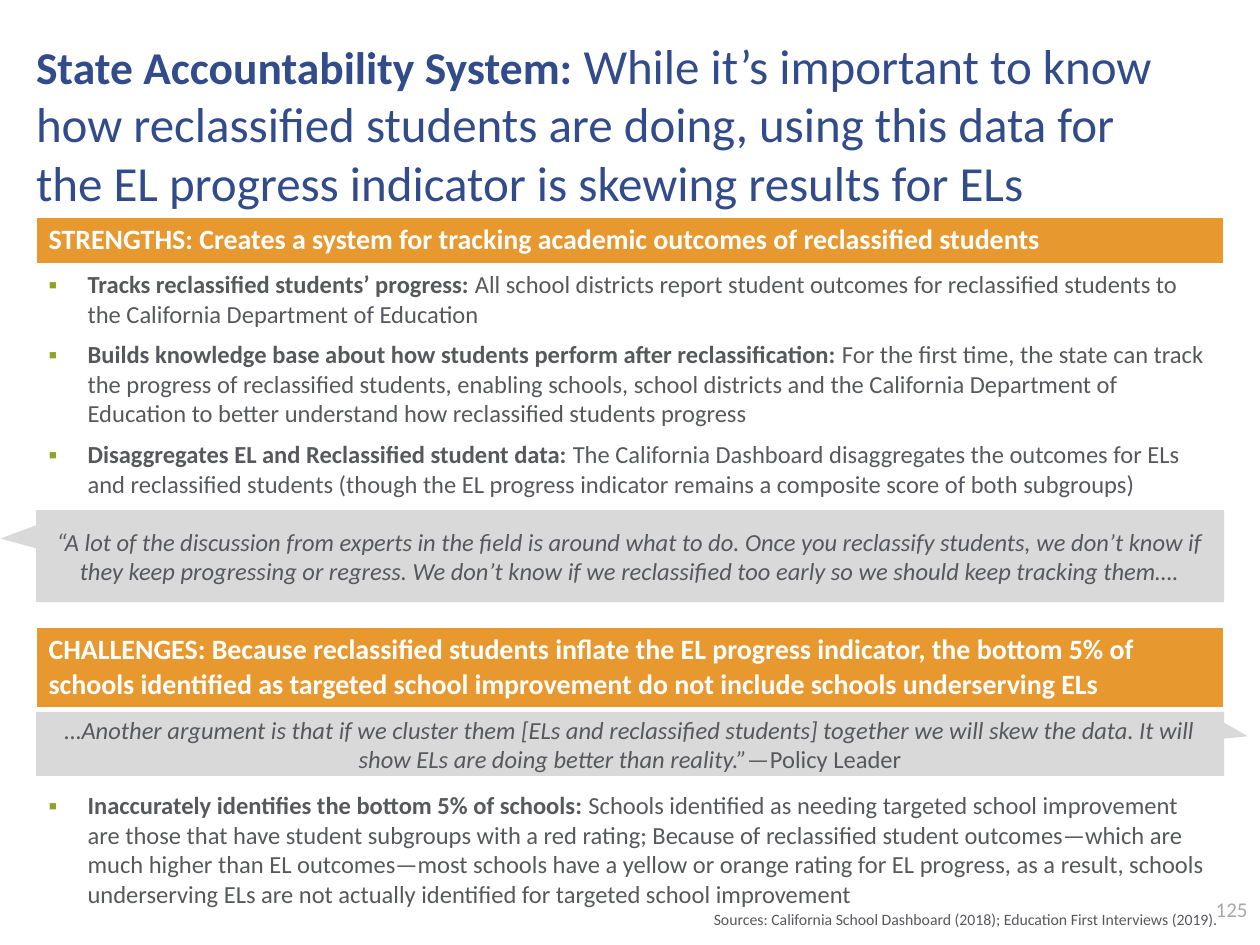
"""Build the slide on strengths and challenges of the state accountability system."""
from dataclasses import dataclass
from typing import Optional

from lxml.etree import SubElement
from pptx import Presentation
from pptx.dml.color import RGBColor
from pptx.enum.shapes import MSO_SHAPE
from pptx.enum.text import MSO_ANCHOR as Anchor, MSO_AUTO_SIZE as AutoSize, PP_ALIGN as Align
from pptx.oxml.ns import qn
from pptx.util import Emu, Pt

SCALE = 914400 / 126
FONT = "Calibri"
WHITE = RGBColor(0xFF, 0xFF, 0xFF)
NAVY = RGBColor(0x32, 0x4B, 0x8B)
ORANGE = RGBColor(0xE7, 0x98, 0x2E)
GREEN = RGBColor(0x91, 0xA2, 0x26)
GRAY = RGBColor(0x56, 0x58, 0x5C)
LIGHT_GRAY = RGBColor(0xD9, 0xD9, 0xD9)
NUMBER_GRAY = RGBColor(0xA9, 0xA9, 0xA9)
LEFT, WIDTH = 36, 1188
BULLET_INDENT = 39


@dataclass(frozen=True)
class Span:
    text: str
    size: int = 14
    color: RGBColor = GRAY
    bold: bool = False
    italic: bool = False


@dataclass(frozen=True)
class Bullet:
    lead: str
    body: str


@dataclass(frozen=True)
class Section:
    heading: str
    heading_height: int
    bullets: list[Bullet]
    body_height: int
    body_margin: int


@dataclass(frozen=True)
class Quote:
    spans: list[Span]
    top: int
    height: int
    tip: tuple[float, float]


@dataclass(frozen=True)
class Label:
    span: Span
    box: tuple[int, int, int, int]
    inset: Optional[int] = None
    anchor: Anchor = Anchor.TOP


SECTIONS = [
    Section(
        "STRENGTHS: Creates a system for tracking academic outcomes of reclassified students", 47,
        [
            Bullet("Tracks reclassified students’ progress: ",
                   "All school districts report student outcomes for reclassified students to "
                   "the California Department of Education"),
            Bullet("Builds knowledge base about how students perform after reclassification: ",
                   "For the first time, the state can track the progress of reclassified students, "
                   "enabling schools, school districts and the California Department of Education "
                   "to better understand how reclassified students progress"),
            Bullet("Disaggregates EL and Reclassified student data: ",
                   "The California Dashboard disaggregates the outcomes for ELs and reclassified "
                   "students (though the EL progress indicator remains a composite score of both "
                   "subgroups)"),
        ], 363, 6),
    Section(
        "CHALLENGES: Because reclassified students inflate the EL progress indicator, the bottom "
        "5% of schools identified as targeted school improvement do not include schools "
        "underserving ELs", 81,
        [
            Bullet("Inaccurately identifies the bottom 5% of schools: ",
                   "Schools identified as needing targeted school improvement are those that have "
                   "student subgroups with a red rating; Because of reclassified student "
                   "outcomes—which are much higher than EL outcomes—most schools have a yellow or "
                   "orange rating for EL progress, as a result, schools underserving ELs are not "
                   "actually identified for targeted school improvement"),
        ], 252, 83),
]

QUOTES = [
    Quote([Span("…Another argument is that if we cluster them [ELs and reclassified students] "
                "together we will skew the data. It will show ELs are doing better than "
                "reality.”—", italic=True), Span("Policy Leader")], 712, 64, (0.52, -0.12)),
    Quote([Span("“A lot of the discussion from experts in the field is around what to do. Once "
                "you reclassify students, we don’t know if they keep progressing or regress. We "
                "don’t know if we reclassified too early so we should keep tracking them….",
                italic=True)], 510, 92, (-0.53, -0.19)),
]

LABELS = [
    Label(Span("125", 12, NUMBER_GRAY), (1176, 890, 84, 38), anchor=Anchor.MIDDLE),
    Label(Span("Sources: California School Dashboard (2018); Education First Interviews (2019).", 9),
          (302, 910, 915, 25), inset=0),
]


def px(length: int) -> Emu:
    return Emu(round(length * SCALE))


def add_spans(paragraph, spans: list[Span]) -> None:
    for span in spans:
        run = paragraph.add_run()
        run.text = span.text
        run.font.name = FONT
        run.font.size = Pt(span.size)
        run.font.color.rgb = span.color
        run.font.bold = span.bold
        run.font.italic = span.italic


def set_insets(frame, inset: int) -> None:
    frame.margin_left = frame.margin_right = px(inset)
    frame.margin_top = frame.margin_bottom = px(inset)


def add_bullet(paragraph) -> None:
    properties = paragraph._p.get_or_add_pPr()
    properties.set("marL", str(px(BULLET_INDENT)))
    properties.set("indent", str(-px(BULLET_INDENT)))
    color = SubElement(properties, qn("a:buClr"))
    SubElement(color, qn("a:srgbClr")).set("val", str(GREEN))
    SubElement(properties, qn("a:buFont")).set("typeface", FONT)
    SubElement(properties, qn("a:buChar")).set("char", "▪")


def add_title(slide) -> None:
    title = slide.shapes.title
    title.left, title.top, title.width, title.height = map(px, (LEFT, 35, 1128, 116))
    frame = title.text_frame
    frame.auto_size = AutoSize.NONE
    frame.word_wrap = True
    frame.vertical_anchor = Anchor.TOP
    set_insets(frame, 0)
    paragraph = frame.paragraphs[0]
    paragraph.alignment = Align.LEFT
    add_spans(paragraph, [
        Span("State Accountability System: ", 26, NAVY, bold=True),
        Span("While it’s important to know how reclassified students are doing, using this data "
             "for the EL progress indicator is skewing results for ELs", 28, NAVY),
    ])


def add_sections(slide, sections: list[Section]) -> None:
    heights = [height for section in sections
               for height in (section.heading_height, section.body_height)]
    table = slide.shapes.add_table(len(heights), 1, px(LEFT), px(217), px(WIDTH),
                                   px(sum(heights))).table
    table.first_row = table.horz_banding = False
    for row, height in zip(table.rows, heights):
        row.height = px(height)
    for index, section in enumerate(sections):
        heading, body = table.cell(2 * index, 0), table.cell(2 * index + 1, 0)
        heading.fill.solid()
        heading.fill.fore_color.rgb = ORANGE
        add_spans(heading.text_frame.paragraphs[0], [Span(section.heading, 16, WHITE, bold=True)])
        body.fill.background()
        body.margin_top = px(section.body_margin)
        for position, bullet in enumerate(section.bullets):
            frame = body.text_frame
            paragraph = frame.add_paragraph() if position else frame.paragraphs[0]
            paragraph.space_after = Pt(6)
            add_bullet(paragraph)
            add_spans(paragraph, [Span(bullet.lead, bold=True), Span(bullet.body)])


def add_quote(slide, quote: Quote) -> None:
    shape = slide.shapes.add_shape(MSO_SHAPE.RECTANGULAR_CALLOUT, px(LEFT), px(quote.top),
                                   px(WIDTH), px(quote.height))
    shape.adjustments[0], shape.adjustments[1] = quote.tip
    shape.shadow.inherit = False
    shape.fill.solid()
    shape.fill.fore_color.rgb = LIGHT_GRAY
    shape.line.fill.background()
    frame = shape.text_frame
    frame.word_wrap = True
    frame.vertical_anchor = Anchor.MIDDLE
    frame.paragraphs[0].alignment = Align.CENTER
    add_spans(frame.paragraphs[0], quote.spans)


def add_label(slide, label: Label) -> None:
    frame = slide.shapes.add_textbox(*map(px, label.box)).text_frame
    frame.word_wrap = True
    frame.vertical_anchor = label.anchor
    if label.inset is not None:
        set_insets(frame, label.inset)
    frame.paragraphs[0].alignment = Align.RIGHT
    add_spans(frame.paragraphs[0], [label.span])


def main() -> None:
    presentation = Presentation()
    presentation.slide_width, presentation.slide_height = px(1260), px(945)
    slide = presentation.slides.add_slide(presentation.slide_layouts[5])
    add_sections(slide, SECTIONS)
    add_title(slide)
    for quote in QUOTES:
        add_quote(slide, quote)
    for label in LABELS:
        add_label(slide, label)
    presentation.save("out.pptx")


if __name__ == "__main__":
    main()
